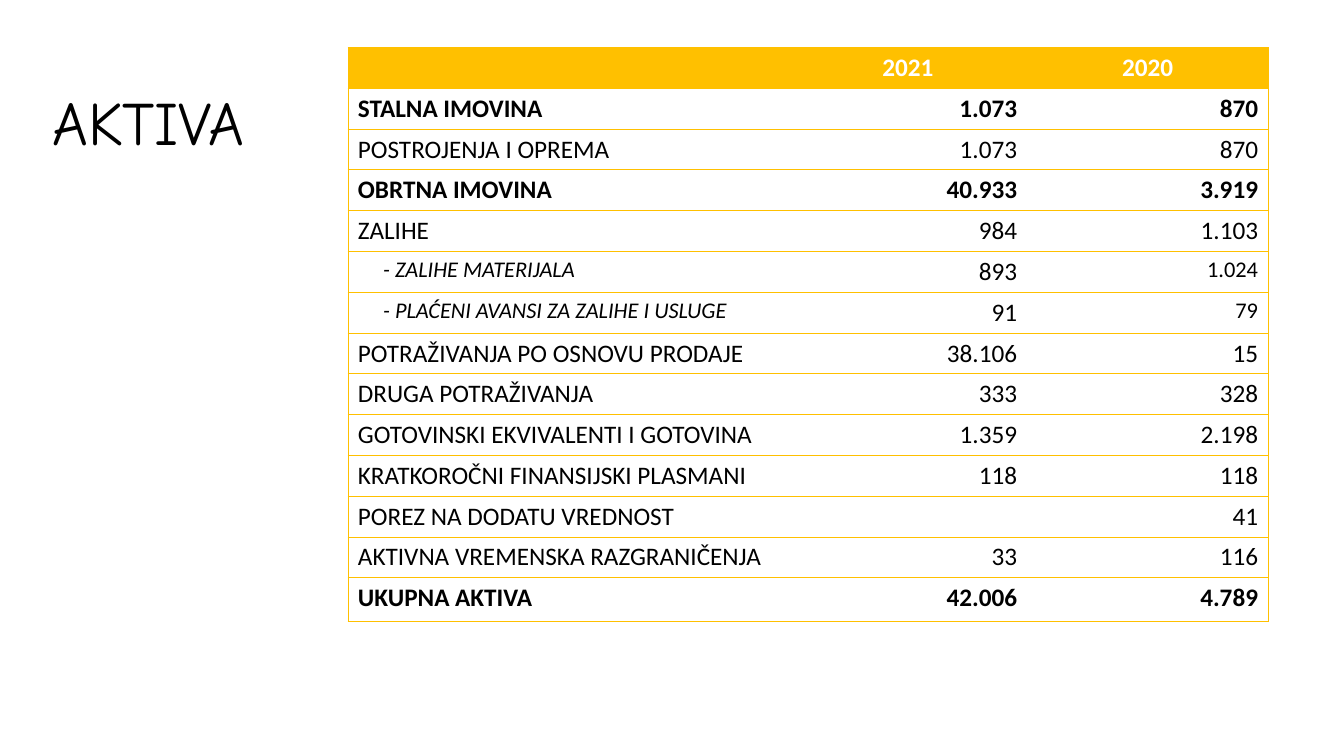
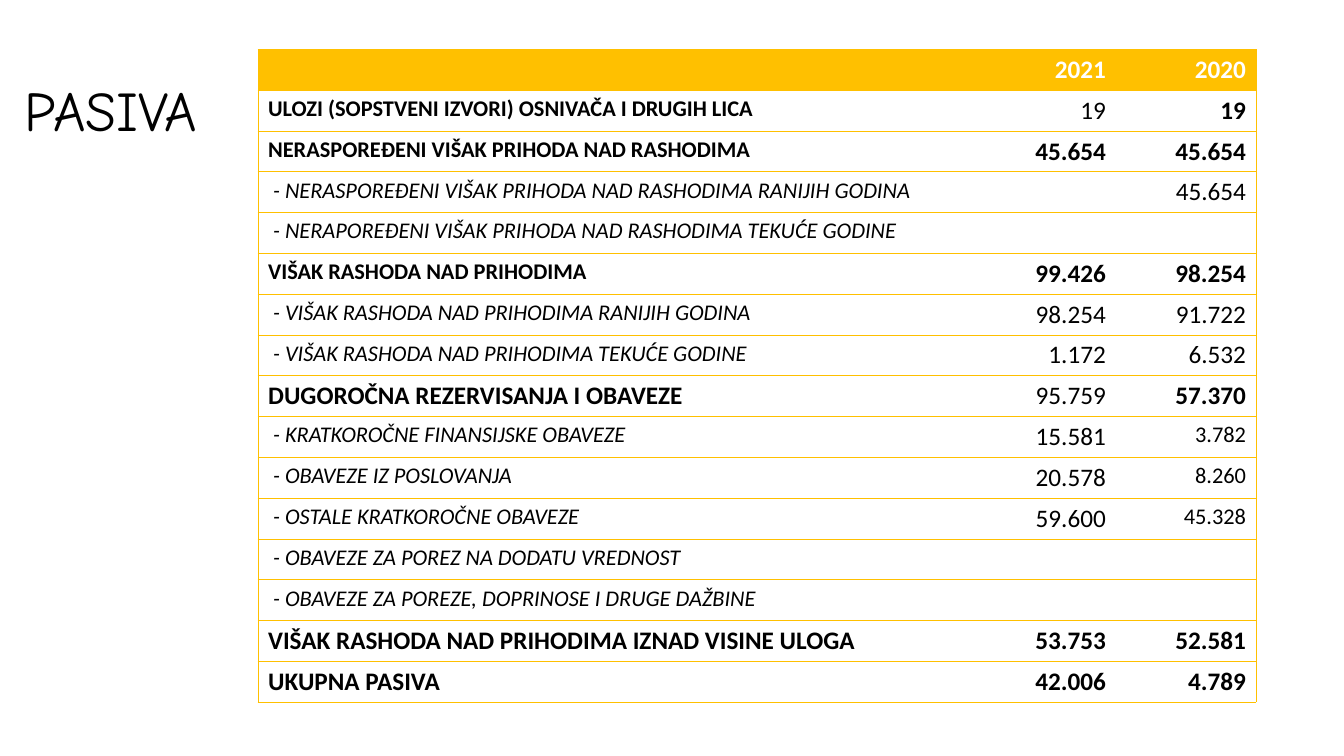
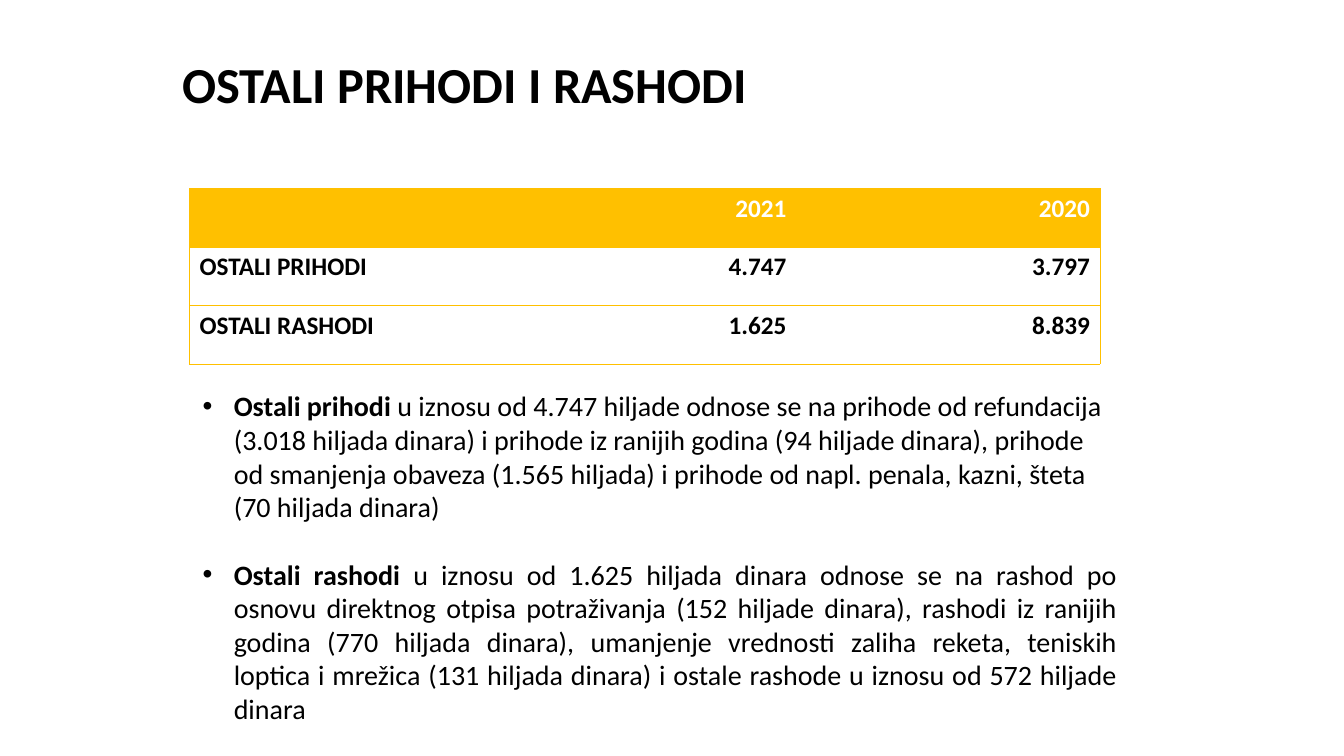
from lxml import etree
from pptx import Presentation
from pptx.dml.color import RGBColor
from pptx.enum import text
from pptx.oxml.ns import qn
from pptx.util import Inches, Pt

GOLD = RGBColor(0xFF, 0xC0, 0x00)
WHITE = RGBColor(0xFF, 0xFF, 0xFF)
BLACK = RGBColor(0, 0, 0)
BODY, HAND = "Calibri", "Comic Neue"
LEFT, MID, RIGHT = text.PP_ALIGN.LEFT, text.PP_ALIGN.CENTER, text.PP_ALIGN.RIGHT
WIDE, HIGH = Inches(13.33), Inches(7.5)
COL, ROW = WIDE / 100, HIGH / 100
STYLES = {
    "B": {"size": Pt(18), "bold": True},
    "n": {"size": Pt(18), "bold": False},
    "b": {"size": Pt(16), "bold": True},
    "s": {"size": Pt(16), "bold": False},
    "i": {"size": Pt(16), "bold": False, "italic": True},
}

ASSETS = [
    ("Bnn", "", "2021", "2020"),
    ("BBB", "STALNA IMOVINA", "1.073", "870"),
    ("nnn", "POSTROJENJA I OPREMA", "1.073", "870"),
    ("BBB", "OBRTNA IMOVINA", "40.933", "3.919"),
    ("nnn", "ZALIHE", "984", "1.103"),
    ("ins", "- ZALIHE MATERIJALA", "893", "1.024"),
    ("ins", "- PLAĆENI AVANSI ZA ZALIHE I USLUGE", "91", "79"),
    ("nnn", "POTRAŽIVANJA PO OSNOVU PRODAJE", "38.106", "15"),
    ("nnn", "DRUGA POTRAŽIVANJA", "333", "328"),
    ("nnn", "GOTOVINSKI EKVIVALENTI I GOTOVINA", "1.359", "2.198"),
    ("nnn", "KRATKOROČNI FINANSIJSKI PLASMANI", "118", "118"),
    ("nnn", "POREZ NA DODATU VREDNOST", "", "41"),
    ("nnn", "AKTIVNA VREMENSKA RAZGRANIČENJA", "33", "116"),
    ("BBB", "UKUPNA AKTIVA", "42.006", "4.789"),
]
DEBTS = [
    ("BBB", "", "2021", "2020"),
    ("bnB", "ULOZI (SOPSTVENI IZVORI) OSNIVAČA I DRUGIH LICA", "19", "19"),
    ("bBB", "NERASPOREĐENI VIŠAK PRIHODA NAD RASHODIMA", "45.654", "45.654"),
    ("inn", "- NERASPOREĐENI VIŠAK PRIHODA NAD RASHODIMA RANIJIH GODINA", "", "45.654"),
    ("inn", "- NERAPOREĐENI VIŠAK PRIHODA NAD RASHODIMA TEKUĆE GODINE", "", ""),
    ("bBB", "VIŠAK RASHODA NAD PRIHODIMA", "99.426", "98.254"),
    ("inn", "- VIŠAK RASHODA NAD PRIHODIMA RANIJIH GODINA", "98.254", "91.722"),
    ("inn", "- VIŠAK RASHODA NAD PRIHODIMA TEKUĆE GODINE", "1.172", "6.532"),
    ("BnB", "DUGOROČNA REZERVISANJA I OBAVEZE", "95.759", "57.370"),
    ("ins", "- KRATKOROČNE FINANSIJSKE OBAVEZE", "15.581", "3.782"),
    ("ins", "- OBAVEZE IZ POSLOVANJA", "20.578", "8.260"),
    ("ins", "- OSTALE KRATKOROČNE OBAVEZE", "59.600", "45.328"),
    ("inn", "- OBAVEZE ZA POREZ NA DODATU VREDNOST", "", ""),
    ("inn", "- OBAVEZE ZA POREZE, DOPRINOSE I DRUGE DAŽBINE", "", ""),
    ("BBB", "VIŠAK RASHODA NAD PRIHODIMA IZNAD VISINE ULOGA", "53.753", "52.581"),
    ("BBB", "UKUPNA PASIVA", "42.006", "4.789"),
]
OTHER = [
    ("BBB", "", "2021", "2020"),
    ("BBB", "OSTALI PRIHODI", "4.747", "3.797"),
    ("BBB", "OSTALI RASHODI", "1.625", "8.839"),
]
NOTES = [
    (LEFT, "Ostali prihodi",
     " u iznosu od 4.747 hiljade odnose se na prihode od refundacija "
     "(3.018 hiljada dinara) i prihode iz ranijih godina (94 hiljade dinara), "
     "prihode od smanjenja obaveza (1.565 hiljada) i prihode od napl. penala, "
     "kazni, šteta (70 hiljada dinara)"),
    (text.PP_ALIGN.JUSTIFY, "Ostali rashodi",
     " u iznosu od 1.625 hiljada dinara odnose se na rashod po osnovu "
     "direktnog otpisa potraživanja (152 hiljade dinara), rashodi iz ranijih "
     "godina (770 hiljada dinara), umanjenje vrednosti zaliha reketa, teniskih "
     "loptica i mrežica (131 hiljada dinara) i ostale rashode u iznosu od 572 "
     "hiljade dinara"),
]


def place(x, y, wide, high):
    """Turn grid columns and rows into slide lengths."""
    return [round(n) for n in (x * COL, y * ROW, wide * COL, high * ROW)]


def style(font, look, color=BLACK, name=BODY):
    """Apply a dict of format values to a font."""
    for key, value in {**look, "name": name}.items():
        setattr(font, key, value)
    font.color.rgb = color


def frame(slide, box):
    """Add a wrapping text box and return its frame."""
    area = slide.shapes.add_textbox(*place(*box)).text_frame
    area.word_wrap = True
    return area


def title(slide, x, y, words, size, name=HAND, bold=False):
    """Place a slide title, centred on its height."""
    area = frame(slide, (x, y, 86.25, 19.33))
    area.vertical_anchor = text.MSO_ANCHOR.MIDDLE
    para = area.paragraphs[0]
    para.line_spacing = 0.9
    run = para.add_run()
    run.text = words
    style(run.font, {"size": Pt(size), "bold": bold}, name=name)


def edge(cell, side, color):
    """Draw one side of a cell, or clear it when there is no colour."""
    line = etree.SubElement(cell._tc.get_or_add_tcPr(), qn("a:ln" + side), w=str(Pt(0.5)))
    if color is None:
        etree.SubElement(line, qn("a:noFill"))
    else:
        fill = etree.SubElement(line, qn("a:solidFill"))
        etree.SubElement(fill, qn("a:srgbClr"), val=str(color))


def fill(cell, words, look, color, align, inset):
    """Write one cell in its style."""
    para = cell.text_frame.paragraphs[0]
    para.alignment = align
    if not words:
        style(para.font, look, color)
        return
    run = para.add_run()
    run.text = words
    style(run.font, look, color)
    if look.get("italic"):
        para._p.get_or_add_pPr().set("marL", str(Inches(inset)))


def grid(slide, box, shares, rows, head=RIGHT, inset=0.05):
    """Place a gold-ruled table whose columns share the box width."""
    spot = place(*box)
    table = slide.shapes.add_table(len(rows), len(shares), *spot).table
    table.horz_banding = False
    for col, share in zip(table.columns, shares):
        col.width = round(spot[2] * share / sum(shares))
    last = len(shares) - 1
    for y, (marks, *words) in enumerate(rows):
        for x, word in enumerate(words):
            cell = table.cell(y, x)
            sides = {"L": x == 0, "R": x == last, "T": True, "B": True}
            for side, shown in sides.items():
                edge(cell, side, GOLD if shown else None)
            cell.fill.solid()
            cell.fill.fore_color.rgb = WHITE if y else GOLD
            look = STYLES[marks[x] if y else "B"]
            align = LEFT if x == 0 else RIGHT if y else head
            fill(cell, word, look, BLACK if y else WHITE, align, inset)
    return table


def notes(slide, box, items):
    """Place bulleted notes with a bold lead."""
    area = frame(slide, box)
    for i, (align, lead, rest) in enumerate(items):
        para = area.add_paragraph() if i else area.paragraphs[0]
        para.alignment = align
        para.space_before = Pt(24 if i else 0)
        props = para._p.get_or_add_pPr()
        props.set("marL", str(Inches(0.31)))
        props.set("indent", str(-Inches(0.31)))
        etree.SubElement(props, qn("a:buFont"), typeface="Arial")
        etree.SubElement(props, qn("a:buChar"), char="•")
        for words, bold in ((lead, True), (rest, False)):
            run = para.add_run()
            run.text = words
            style(run.font, {"size": Pt(20), "bold": bold})


def main():
    """Build the three slides."""
    deck = Presentation()
    deck.slide_width, deck.slide_height = WIDE, HIGH
    first, second, third = [deck.slides.add_slide(deck.slide_layouts[6]) for _ in range(3)]

    title(first, 3.15, 6.93, "AKTIVA", 44)
    table = grid(first, (25.88, 6.27, 68.48, 75.6), (4.37, 2.37, 2.39), ASSETS, MID, 0.25)
    table.rows[len(ASSETS) - 1].height = round(5.8 * ROW)

    title(second, 1.05, 5.33, "PASIVA", 40)
    grid(second, (19.2, 6.53, 74.26, 86.4), (6.98, 1.53, 1.39), DEBTS)

    title(third, 12.83, 1.87, "OSTALI PRIHODI I RASHODI", 36, BODY, True)
    grid(third, (14.1, 24.93, 67.74, 23.2), (1, 1, 1), OTHER)
    notes(third, (14.33, 50.8, 69.54, 46.27), NOTES)
    deck.save("out.pptx")


if __name__ == "__main__":
    main()
